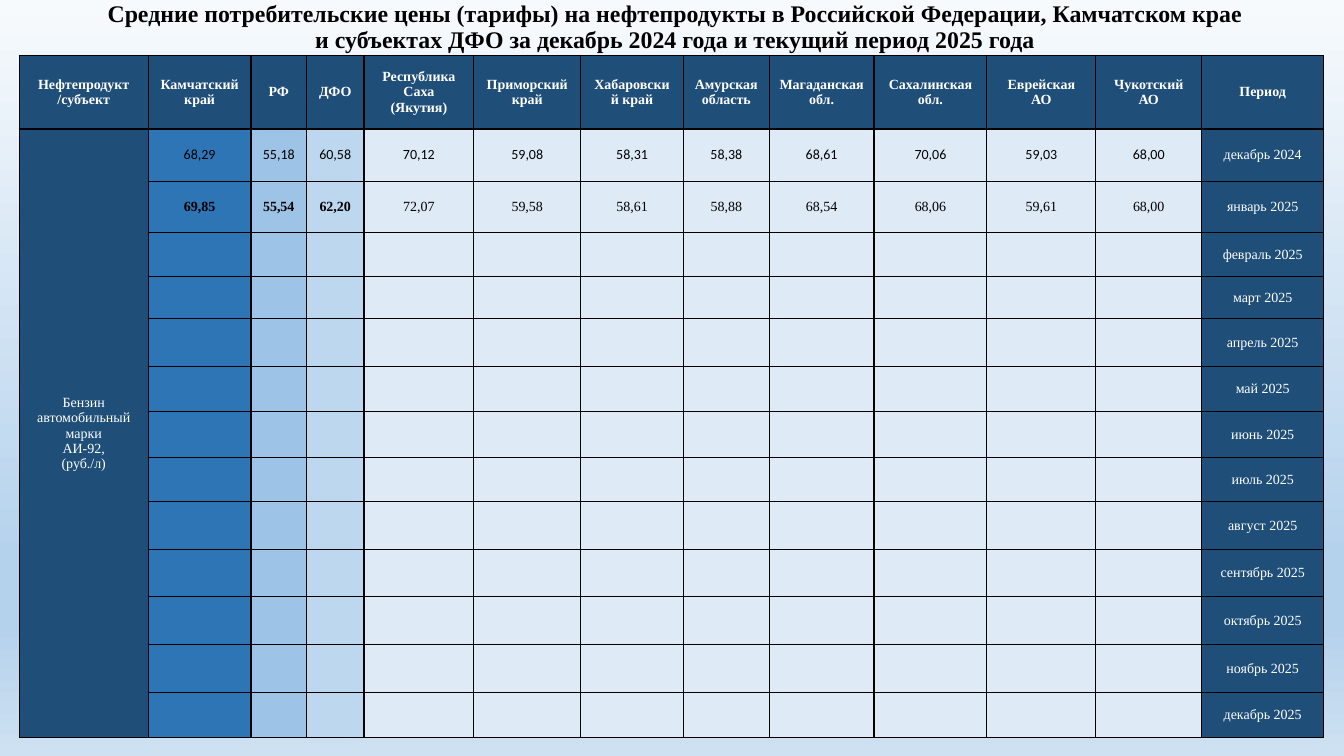
import pptx
import pptx.util
import pptx.dml.color
import pptx.enum.text
import pptx.oxml
import pptx.oxml.ns

Inches = pptx.util.Inches
SERIF = "Times New Roman"
COLORS = {
    "navy": "1F4E79", "blue": "2E75B6", "sky": "9DC3E6", "light": "BDD7EE",
    "pale": "DEEBF7", "white": "FFFFFF", "black": "000000",
}
STOPS = [(0, "F7FAFD"), (74, "B5D2EC"), (83, "B5D2EC"), (100, "CEE1F2")]

TITLE = ("Средние потребительские цены (тарифы) на нефтепродукты в Российской Федерации, "
         "Камчатском крае и субъектах ДФО за декабрь 2024 года и текущий период 2025 года")
HEADS = ["Нефтепродукт\n/субъект", "Камчатский край", "РФ", "ДФО", "Республика Саха (Якутия)",
         "Приморский край", "Хабаровский край", "Амурская область", "Магаданская обл.",
         "Сахалинская обл.", "Еврейская АО", "Чукотский АО", "Период"]
FUEL = "Бензин автомобильный марки\nАИ-92,\n(руб./л)"
MONTHS = ["январь", "февраль", "март", "апрель", "май", "июнь", "июль", "август",
          "сентябрь", "октябрь", "ноябрь", "декабрь"]
DATES = ["декабрь 2024"] + [f"{month} 2025" for month in MONTHS]
PRICES = [
    "68,29 55,18 60,58 70,12 59,08 58,31 58,38 68,61 70,06 59,03 68,00".split(),
    "69,85 55,54 62,20 72,07 59,58 58,61 58,88 68,54 68,06 59,61 68,00".split(),
]
WIDTHS = [1.28, 1.02, 0.55, 0.57, 1.09, 1.06, 1.02, 0.85, 1.04, 1.12, 1.08, 1.05, 1.21]
HEIGHTS = [0.73, 0.52, 0.51, 0.43, 0.42, 0.48, 0.44, 0.46, 0.44, 0.47, 0.47, 0.48, 0.47, 0.45]
FILLS = ["navy", "blue", "sky", "light"] + ["pale"] * 8 + ["navy"]


def rgb(name):
    return pptx.dml.color.RGBColor.from_string(COLORS[name])


def write(frame, text, size=10, font=SERIF, color="black", bold=False, space=None):
    frame.text = text
    for para in frame.paragraphs:
        para.alignment = pptx.enum.text.PP_ALIGN.CENTER
        para.line_spacing = space
        for run in para.runs:
            run.font.size = pptx.util.Pt(size)
            run.font.name = font
            run.font.bold = bold
            run.font.color.rgb = rgb(color)


def paint(slide):
    """Fill the background with a vertical gradient."""
    fill = slide.background.fill
    fill.gradient()
    fill.gradient_angle = 270
    stops = slide.background.fill._fill._gradFill.find(pptx.oxml.ns.qn("a:gsLst"))
    for stop in list(stops):
        stops.remove(stop)
    for pos, color in STOPS:
        stops.append(pptx.oxml.parse_xml(
            f'<a:gs {pptx.oxml.ns.nsdecls("a")} pos="{pos * 1000}">'
            f'<a:srgbClr val="{color}"/></a:gs>'))


def head(slide, left, top, width, height):
    """Place the title."""
    title = slide.shapes.title
    title.left, title.top = Inches(left), Inches(top)
    title.width, title.height = Inches(width), Inches(height)
    frame = title.text_frame
    frame.word_wrap = True
    frame.auto_size = pptx.enum.text.MSO_AUTO_SIZE.NONE
    frame.vertical_anchor = pptx.enum.text.MSO_ANCHOR.MIDDLE
    write(frame, TITLE, size=17, bold=True, space=0.9)


def style(cell, fill):
    """Give a cell thin black borders, then its fill."""
    props = cell._tc.get_or_add_tcPr()
    for side in "LRTB":
        props.append(pptx.oxml.parse_xml(
            f'<a:ln{side} {pptx.oxml.ns.nsdecls("a")} w="12700"><a:solidFill>'
            f'<a:srgbClr val="{COLORS["black"]}"/></a:solidFill></a:ln{side}>'))
    cell.fill.solid()
    cell.fill.fore_color.rgb = rgb(fill)
    cell.vertical_anchor = pptx.enum.text.MSO_ANCHOR.MIDDLE


def grid(slide, left, top, width, height):
    """Build the price table."""
    table = slide.shapes.add_table(len(HEIGHTS), len(WIDTHS), Inches(left), Inches(top),
                                   Inches(width), Inches(height)).table
    table.first_row = table.horz_banding = False
    for col, size in zip(table.columns, WIDTHS):
        col.width = Inches(size)
    for row, size in zip(table.rows, HEIGHTS):
        row.height = Inches(size)
    for r in range(len(HEIGHTS)):
        for c, fill in enumerate(FILLS):
            style(table.cell(r, c), fill if r else "navy")

    # Header row, fuel name and periods
    for c, text in enumerate(HEADS):
        write(table.cell(0, c).text_frame, text, color="white", bold=True)
    fuel = table.cell(1, 0)
    fuel.merge(table.cell(len(DATES), 0))
    write(fuel.text_frame, FUEL, color="white")
    for r, text in enumerate(DATES, 1):
        write(table.cell(r, len(HEADS) - 1).text_frame, text, color="white")

    # Prices: the second row stands out in its first three columns
    for r, (prices, font) in enumerate(zip(PRICES, ["Calibri", SERIF]), 1):
        for c, text in enumerate(prices, 1):
            write(table.cell(r, c).text_frame, text, font=font, bold=r == 2 and c <= 3)


def main():
    deck = pptx.Presentation()
    deck.slide_width, deck.slide_height = Inches(13.33), Inches(7.5)
    slide = deck.slides.add_slide(deck.slide_layouts[5])
    paint(slide)
    head(slide, 0.92, 0, 11.55, 0.55)
    grid(slide, 0.19, 0.55, 12.95, 6.8)
    deck.save("out.pptx")


if __name__ == "__main__":
    main()
